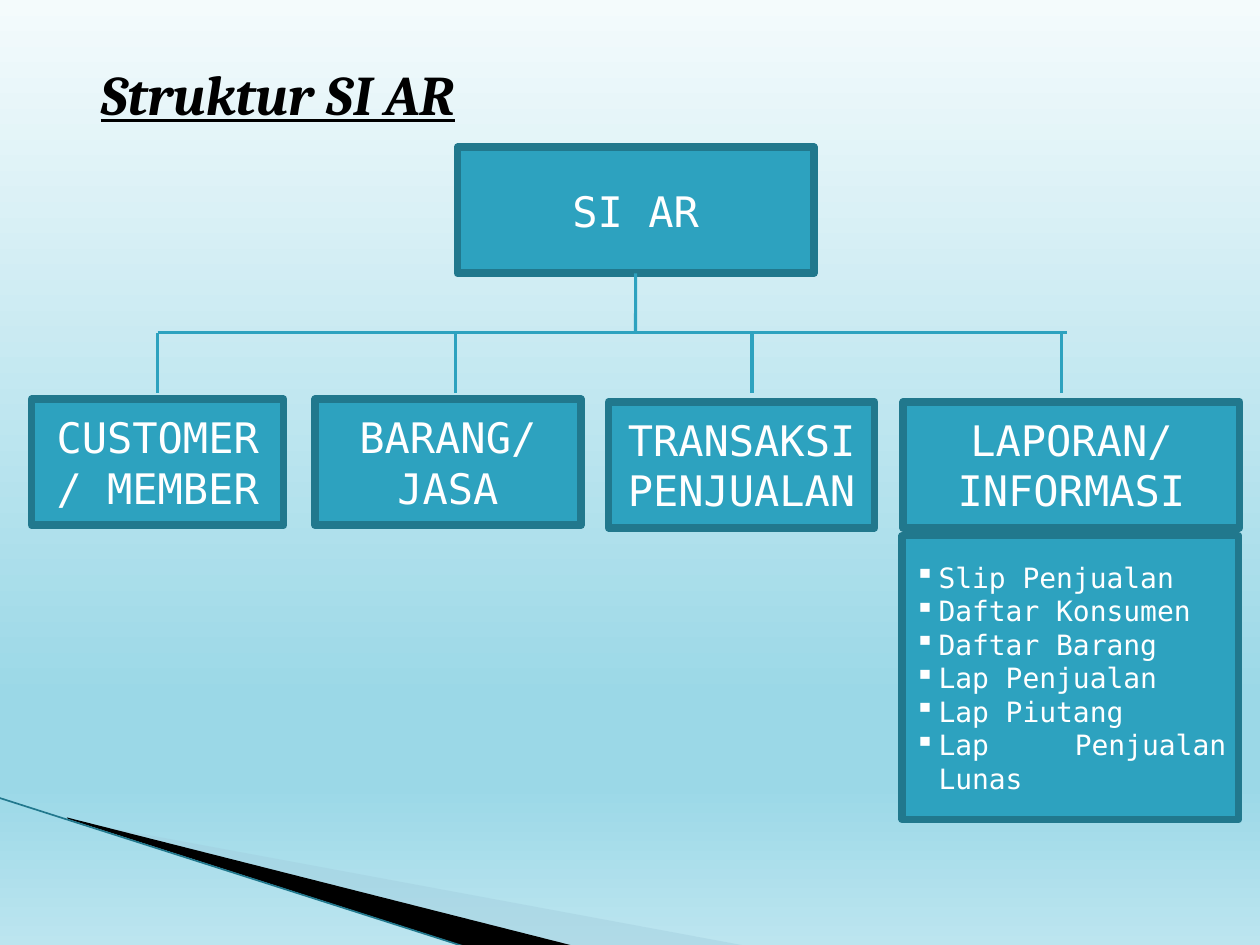
"""Build the SI AR structure chart slide."""
from lxml.etree import SubElement
from pptx import Presentation
from pptx.dml.color import RGBColor
from pptx.enum.shapes import MSO_CONNECTOR, MSO_SHAPE
from pptx.enum.text import MSO_ANCHOR, MSO_AUTO_SIZE, PP_ALIGN
from pptx.oxml.ns import qn
from pptx.util import Cm, Pt

BLACK = RGBColor(0x00, 0x00, 0x00)
WHITE = RGBColor(0xFF, 0xFF, 0xFF)
TEAL = RGBColor(0x2D, 0xA2, 0xBF)
DARK_TEAL = RGBColor(0x21, 0x78, 0x8D)
PALE_BLUE = RGBColor(0xA0, 0xCB, 0xDC)
SKY = [
    (0, RGBColor(0xF4, 0xFB, 0xFC)),
    (74, RGBColor(0x9B, 0xD8, 0xE7)),
    (83, RGBColor(0x9B, 0xD8, 0xE7)),
    (100, RGBColor(0xBC, 0xE5, 0xEF)),
]

TITLE = "Struktur SI AR"
ROOT = ("SI AR", 9.22, 2.97, 7.19)
BRANCHES = [
    ("CUSTOMER/ MEMBER", 0.64, 8.05, 5.08),
    ("BARANG/ JASA", 6.35, 8.05, 5.36),
    ("TRANSAKSI PENJUALAN", 12.27, 8.1, 5.36),
    ("LAPORAN/ INFORMASI", 18.21, 8.1, 6.78),
]
REPORTS = [
    "Slip Penjualan",
    "Daftar Konsumen",
    "Daftar Barang",
    "Lap Penjualan",
    "Lap Piutang",
    "Lap Penjualan Lunas",
]
BOX_HEIGHT = 2.54
STEM_X, RAIL_Y, DROP_END = 12.81, 6.71, 7.92
RAIL_LEFT, RAIL_RIGHT = 3.18, 21.51
DROPS = [3.18, 9.19, 15.16, 21.39]
SWOOSHES = [
    (PALE_BLUE, 40, [(1.4, 16.54), (15.11, 19.08), (11.58, 19.08), (1.4, 16.51)]),
    (BLACK, 100, [(1.35, 16.48), (11.61, 19.08), (9.45, 19.1), (1.37, 16.51)]),
]

TITLE_FONT = {"name": "Cambria", "size": Pt(32), "bold": True, "italic": True, "underline": True}
LABEL_FONT = {"name": "DejaVu Sans Mono", "size": Pt(24)}
REPORT_FONT = {**LABEL_FONT, "size": Pt(16)}
BOX_FRAME = {"word_wrap": True, "vertical_anchor": MSO_ANCHOR.MIDDLE}


def apply_format(target, values):
    for name, value in values.items():
        setattr(target, name, value)


def paint_sky(slide):
    fill = slide.background.fill
    fill.gradient()
    fill.gradient_angle = 270
    stops = slide.element.find(".//" + qn("a:gsLst"))
    stops.clear()
    for position, color in SKY:
        stop = SubElement(stops, qn("a:gs"), pos=str(position * 1000))
        SubElement(stop, qn("a:srgbClr"), val=str(color))


def add_swoosh(slide, color, opacity, points):
    corners = [(Cm(x), Cm(y)) for x, y in points]
    builder = slide.shapes.build_freeform(*corners[0])
    builder.add_line_segments(corners[1:], close=True)
    swoosh = builder.convert_to_shape()
    swoosh.shadow.inherit = False
    swoosh.fill.solid()
    swoosh.fill.fore_color.rgb = color
    swoosh.line.fill.background()
    if opacity < 100:
        tint = swoosh.element.find(".//" + qn("a:srgbClr"))
        SubElement(tint, qn("a:alpha"), val=str(opacity * 1000))


def add_line(slide, start, end, color=TEAL, width=1.75):
    line = slide.shapes.add_connector(MSO_CONNECTOR.STRAIGHT, *map(Cm, start + end))
    apply_format(line.line, {"width": Pt(width)})
    line.line.color.rgb = color
    SubElement(line.element.spPr, qn("a:effectLst"))
    return line


def write(paragraph, text, font, color, alignment):
    paragraph.text = text
    paragraph.alignment = alignment
    apply_format(paragraph.font, font)
    paragraph.font.color.rgb = color


def add_box(slide, left, top, width, height=BOX_HEIGHT):
    box = slide.shapes.add_shape(MSO_SHAPE.RECTANGLE, *map(Cm, (left, top, width, height)))
    box.shadow.inherit = False
    box.fill.solid()
    box.fill.fore_color.rgb = TEAL
    box.line.color.rgb = DARK_TEAL
    box.line.width = Pt(4.33)
    apply_format(box.text_frame, BOX_FRAME)
    return box


def add_label_box(slide, text, left, top, width):
    box = add_box(slide, left, top, width)
    write(box.text_frame.paragraphs[0], text, LABEL_FONT, WHITE, PP_ALIGN.CENTER)
    return box


def add_reports(slide):
    frame = add_box(slide, 18.19, 10.8, 6.78, 5.72).text_frame
    for index, report in enumerate(REPORTS):
        paragraph = frame.add_paragraph() if index else frame.paragraphs[0]
        properties = paragraph._p.get_or_add_pPr()
        properties.set("marL", str(Cm(0.48)))
        properties.set("indent", str(Cm(-0.48)))
        SubElement(properties, qn("a:buChar"), char="▪")
        write(paragraph, report, REPORT_FONT, WHITE, PP_ALIGN.JUSTIFY)


def main():
    deck = Presentation()
    apply_format(deck, {"slide_width": Cm(25.4), "slide_height": Cm(19.05)})
    slide = deck.slides.add_slide(deck.slide_layouts[6])
    paint_sky(slide)
    for swoosh in SWOOSHES:
        add_swoosh(slide, *swoosh)
    add_line(slide, (-0.03, 16.08), (9.42, 19.1), DARK_TEAL, 0.95)

    title = slide.shapes.add_textbox(Cm(1.78), Cm(1.07), Cm(19.74), Cm(1.63)).text_frame
    apply_format(title, {"word_wrap": True, "auto_size": MSO_AUTO_SIZE.SHAPE_TO_FIT_TEXT})
    write(title.paragraphs[0], TITLE, TITLE_FONT, BLACK, PP_ALIGN.LEFT)

    root = add_label_box(slide, *ROOT)
    for branch in BRANCHES:
        add_label_box(slide, *branch)
    stem = add_line(slide, (STEM_X, ROOT[2] + BOX_HEIGHT), (STEM_X, RAIL_Y))
    stem.begin_connect(root, 2)
    add_line(slide, (RAIL_LEFT, RAIL_Y), (RAIL_RIGHT, RAIL_Y))
    for x in DROPS:
        add_line(slide, (x, RAIL_Y), (x, DROP_END))
    add_reports(slide)
    deck.save("out.pptx")


if __name__ == "__main__":
    main()
